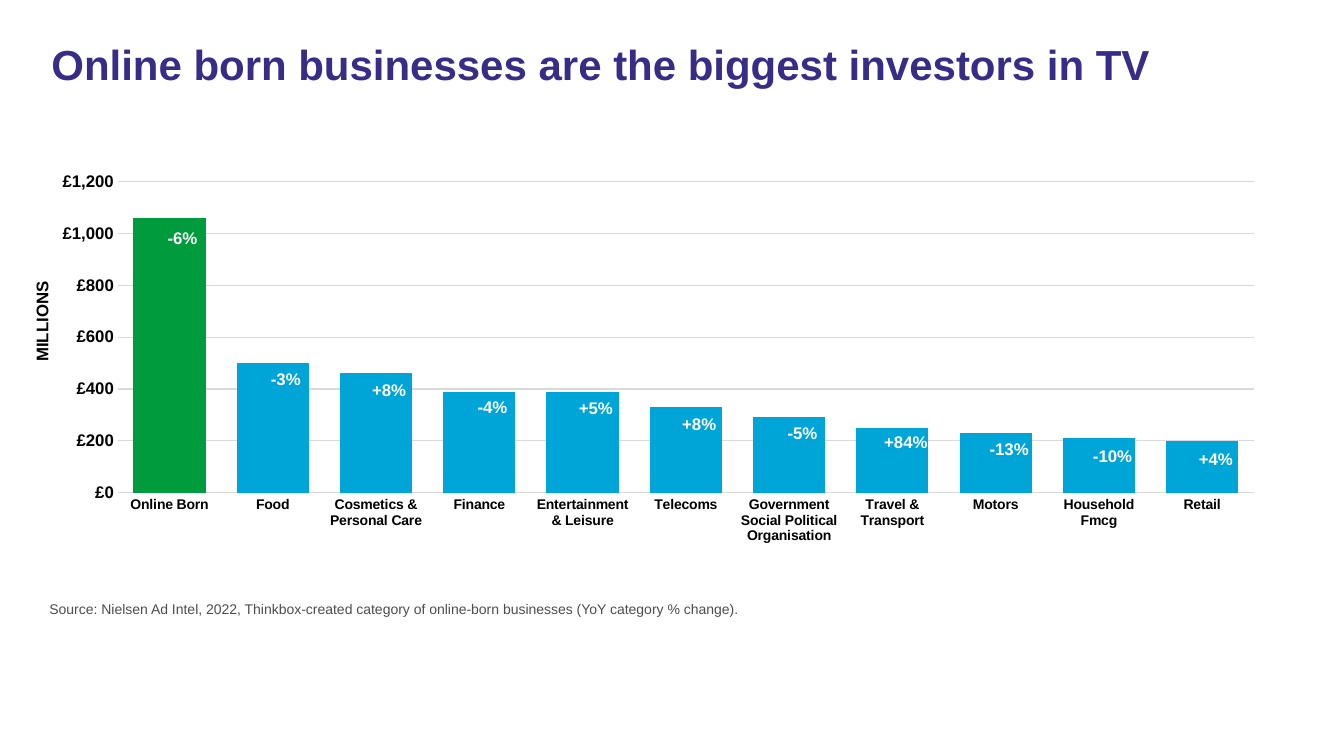
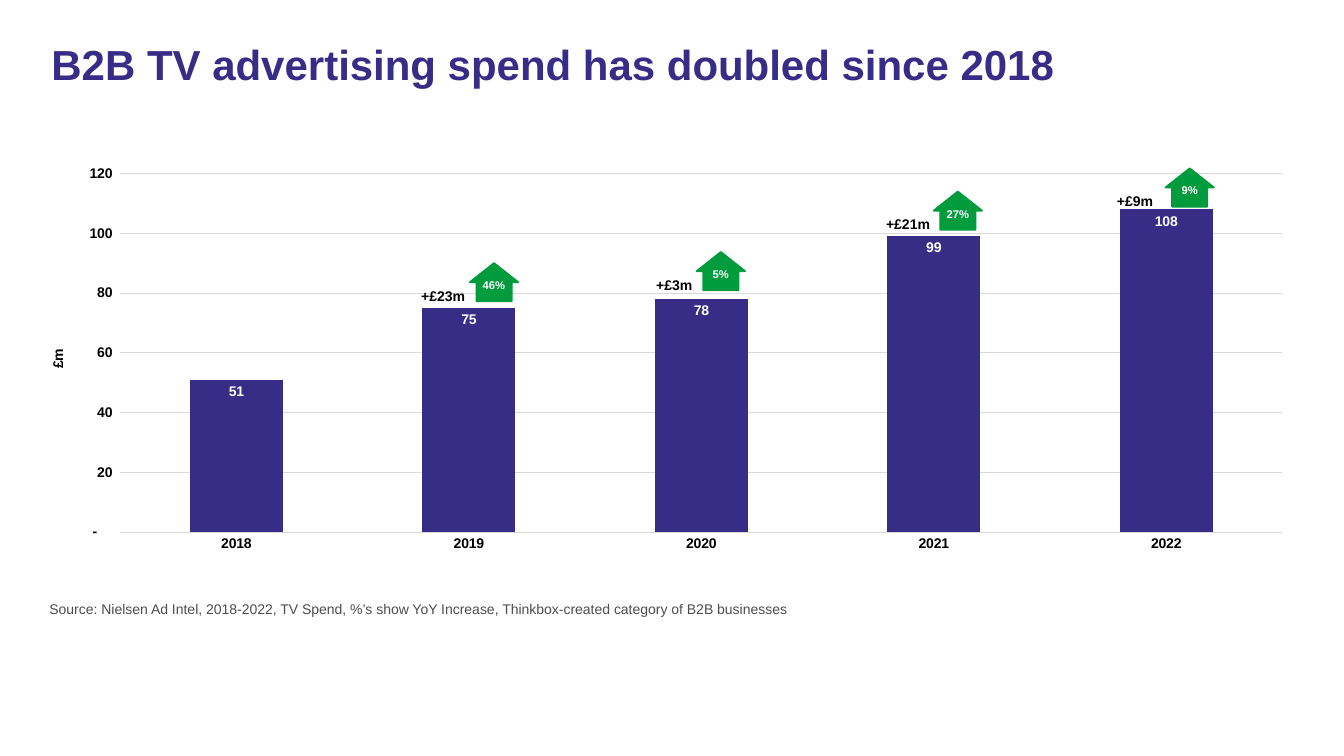
from lxml import etree
from pptx import Presentation
from pptx.chart.data import CategoryChartData
from pptx.dml.color import RGBColor
from pptx.enum.chart import XL_CHART_TYPE, XL_LABEL_POSITION, XL_TICK_MARK
from pptx.enum.shapes import MSO_SHAPE
from pptx.enum.text import MSO_ANCHOR, MSO_AUTO_SIZE, PP_ALIGN
from pptx.oxml.ns import qn
from pptx.util import Inches, Pt

COLORS = {
    "purple": "372D87",
    "blue": "00A5D7",
    "green": "009B3C",
    "grid": "D9D9D9",
    "source": "4D4D4D",
    "black": "000000",
    "white": "FFFFFF",
}
FONT = "Arial"
POUNDS = '"£"#,##0'
ACCOUNTING = '_-* #,##0_-;\\-* #,##0_-;_-* "-"??_-;_-@_'


def set_text(shape, text, size, color, bold=True, align=PP_ALIGN.LEFT):
    frame = shape.text_frame
    frame.text = text
    frame.word_wrap = True
    paragraph = frame.paragraphs[0]
    paragraph.alignment = align
    paragraph.space_before = Pt(0)
    font = paragraph.runs[0].font
    font.name, font.size, font.bold = FONT, Pt(size), bold
    font.color.rgb = RGBColor.from_string(COLORS[color])


def add_columns(slide, kind, box, plot_area, rows, color, gap, overlap,
                axis_max, axis_size, axis_format):
    data = CategoryChartData()
    data.categories = [name for name, _ in rows]
    data.add_series("Series 1", [value for _, value in rows])
    chart = slide.shapes.add_chart(kind, *map(Inches, box), data).chart
    chart.has_legend = chart.has_title = False
    chart.font.name, chart.font.size = FONT, Pt(10)
    chart.font.color.rgb = RGBColor.from_string(COLORS["black"])

    # Columns
    columns = chart.plots[0]
    columns.gap_width, columns.overlap = gap, overlap
    columns.vary_by_categories = False
    fill = columns.series[0].format.fill
    fill.solid()
    fill.fore_color.rgb = RGBColor.from_string(COLORS[color])

    # Axes and gridlines
    names, values = chart.category_axis, chart.value_axis
    values.minimum_scale, values.maximum_scale = 0, axis_max
    values.major_unit = axis_max // 120 * 20
    values.has_major_gridlines = True
    for axis, size in ((names, 10), (values, axis_size)):
        axis.major_tick_mark = axis.minor_tick_mark = XL_TICK_MARK.NONE
        font = axis.tick_labels.font
        font.name, font.size, font.bold = FONT, Pt(size), True
        font.color.rgb = RGBColor.from_string(COLORS["black"])
    for line in (names.format.line, values.major_gridlines.format.line):
        line.color.rgb = RGBColor.from_string(COLORS["grid"])
        line.width = Pt(0.75)
    values.format.line.fill.background()
    values.tick_labels.number_format = axis_format
    values.tick_labels.number_format_is_linked = False

    # Inner plot area, as fractions of the chart
    plot = chart._chartSpace.find(".//" + qn("c:plotArea"))
    for old in plot.findall(qn("c:layout")):
        plot.remove(old)
    layout = etree.Element(qn("c:layout"))
    manual = etree.SubElement(layout, qn("c:manualLayout"))
    settings = [("layoutTarget", "inner"), ("xMode", "edge"), ("yMode", "edge")]
    for tag, value in settings + list(zip("xywh", plot_area)):
        etree.SubElement(manual, qn("c:" + tag)).set("val", str(value))
    plot.insert(0, layout)
    return chart


prs = Presentation()
prs.slide_width, prs.slide_height = Inches(13.33), Inches(7.5)

# Titles and sources
slides = []
for heading, source in (
    ("Online born businesses are the biggest investors in TV",
     "Source: Nielsen Ad Intel, 2022, Thinkbox-created category of "
     "online-born businesses (YoY category % change)."),
    ("B2B TV advertising spend has doubled since 2018",
     "Source: Nielsen Ad Intel, 2018-2022, TV Spend, %’s show YoY Increase, "
     "Thinkbox-created category of B2B businesses"),
):
    slide = prs.slides.add_slide(prs.slide_layouts[1])
    title, body = slide.shapes.title, slide.placeholders[1]
    for holder, box in ((title, (0.41, 0.39, 12.4, 1.12)),
                        (body, (0.39, 5.91, 12.4, 0.33))):
        holder.left, holder.top, holder.width, holder.height = map(Inches, box)
        holder.text_frame.auto_size = MSO_AUTO_SIZE.NONE
        holder.text_frame.vertical_anchor = MSO_ANCHOR.TOP
    set_text(title, heading, 30, "purple")
    title.text_frame.paragraphs[0].line_spacing = 0.9
    set_text(body, source, 10, "source", bold=False)
    properties = body.text_frame.paragraphs[0]._p.get_or_add_pPr()
    properties.set("marL", "0")
    properties.set("indent", "0")
    etree.SubElement(properties, qn("a:buNone"))
    slides.append(slide)
category_slide, b2b_slide = slides

# Spend by category: name, £ millions, yearly change, top of the change label
categories = [
    ("Online Born", 1060, "-6%", 2.21),
    ("Food", 500, "-3%", 3.61),
    ("Cosmetics & Personal Care", 460, "+8%", 3.72),
    ("Finance", 390, "-4%", 3.89),
    ("Entertainment & Leisure", 390, "+5%", 3.9),
    ("Telecoms", 330, "+8%", 4.06),
    ("Government Social Political Organisation", 290, "-5%", 4.14),
    ("Travel & Transport", 250, "+84%", 4.23),
    ("Motors", 230, "-13%", 4.3),
    ("Household Fmcg", 210, "-10%", 4.37),
    ("Retail", 200, "+4%", 4.4),
]
category_chart = add_columns(
    category_slide, XL_CHART_TYPE.COLUMN_CLUSTERED, (0.62, 1.39, 12.53, 4.58),
    (0.043, 0.034, 0.9, 0.73), [row[:2] for row in categories], "blue",
    gap=43, overlap=-27, axis_max=1300, axis_size=12, axis_format=POUNDS)
online_born = category_chart.plots[0].series[0].points[0].format.fill
online_born.solid()
online_born.fore_color.rgb = RGBColor.from_string(COLORS["green"])

# Unit label and yearly changes
unit = category_slide.shapes.add_textbox(
    Inches(-0.15), Inches(3.04), Inches(1.13), Inches(0.3))
unit.rotation = 270
set_text(unit, "MILLIONS", 12, "black", align=PP_ALIGN.CENTER)
first_left, column_step = 1.36, 1.025
for i, (_, _, change, top) in enumerate(categories):
    change_label = category_slide.shapes.add_textbox(
        Inches(first_left + i * column_step), Inches(top), Inches(0.9), Inches(0.3))
    set_text(change_label, change, 12, "white", align=PP_ALIGN.CENTER)
    change_label.text_frame.auto_size = MSO_AUTO_SIZE.SHAPE_TO_FIT_TEXT

# B2B spend by year
b2b_spend = [("2018", 51), ("2019", 75), ("2020", 78), ("2021", 99), ("2022", 108)]
b2b_chart = add_columns(
    b2b_slide, XL_CHART_TYPE.COLUMN_STACKED, (0.46, 1.57, 12.41, 4.36),
    (0.059, 0.035, 0.929, 0.816), b2b_spend, "purple",
    gap=150, overlap=100, axis_max=120, axis_size=10, axis_format=ACCOUNTING)
axis_title = b2b_chart.value_axis.axis_title.text_frame
axis_title.text = "£m"
axis_font = axis_title.paragraphs[0].runs[0].font
axis_font.name, axis_font.size, axis_font.bold = FONT, Pt(10), True
axis_font.color.rgb = RGBColor.from_string(COLORS["black"])

# Spend inside each column
spend_labels = b2b_chart.plots[0].series[0].data_labels
spend_labels.show_value = True
spend_labels.position = XL_LABEL_POSITION.INSIDE_END
spend_labels.number_format = ACCOUNTING
spend_labels.number_format_is_linked = False
spend_font = spend_labels.font
spend_font.name, spend_font.size, spend_font.bold = FONT, Pt(10), True
spend_font.color.rgb = RGBColor.from_string(COLORS["white"])

# Yearly growth: amount and its left, percentage and its left, top of the arrow
for amount, amount_left, percent, arrow_left, top in (
    ("+£23m", 4.08, "46%", 4.66, 2.61),
    ("+£3m", 6.41, "5%", 6.91, 2.5),
    ("+£21m", 8.69, "27%", 9.26, 1.9),
    ("+£9m", 10.98, "9%", 11.56, 1.67),
):
    growth = b2b_slide.shapes.add_group_shape()
    amount_label = growth.shapes.add_textbox(
        Inches(amount_left), Inches(top + 0.19), Inches(0.74), Inches(0.27))
    set_text(amount_label, amount, 10, "black")
    amount_label.text_frame.auto_size = MSO_AUTO_SIZE.SHAPE_TO_FIT_TEXT

    arrow = growth.shapes.add_shape(
        MSO_SHAPE.UP_ARROW, Inches(arrow_left), Inches(top), Inches(0.48), Inches(0.38))
    arrow.shadow.inherit = False
    arrow.adjustments[0], arrow.adjustments[1] = 0.728, 0.5
    arrow.fill.solid()
    arrow.fill.fore_color.rgb = RGBColor.from_string(COLORS["green"])
    arrow.line.color.rgb = RGBColor.from_string(COLORS["green"])
    arrow.line.width = Pt(1.25)
    set_text(arrow, percent, 8, "white", align=PP_ALIGN.CENTER)
    inside = arrow.text_frame
    inside.margin_left = inside.margin_right = inside.margin_top = 0
    inside.margin_bottom = Inches(0.08)
    inside.vertical_anchor = MSO_ANCHOR.MIDDLE

prs.save("out.pptx")
